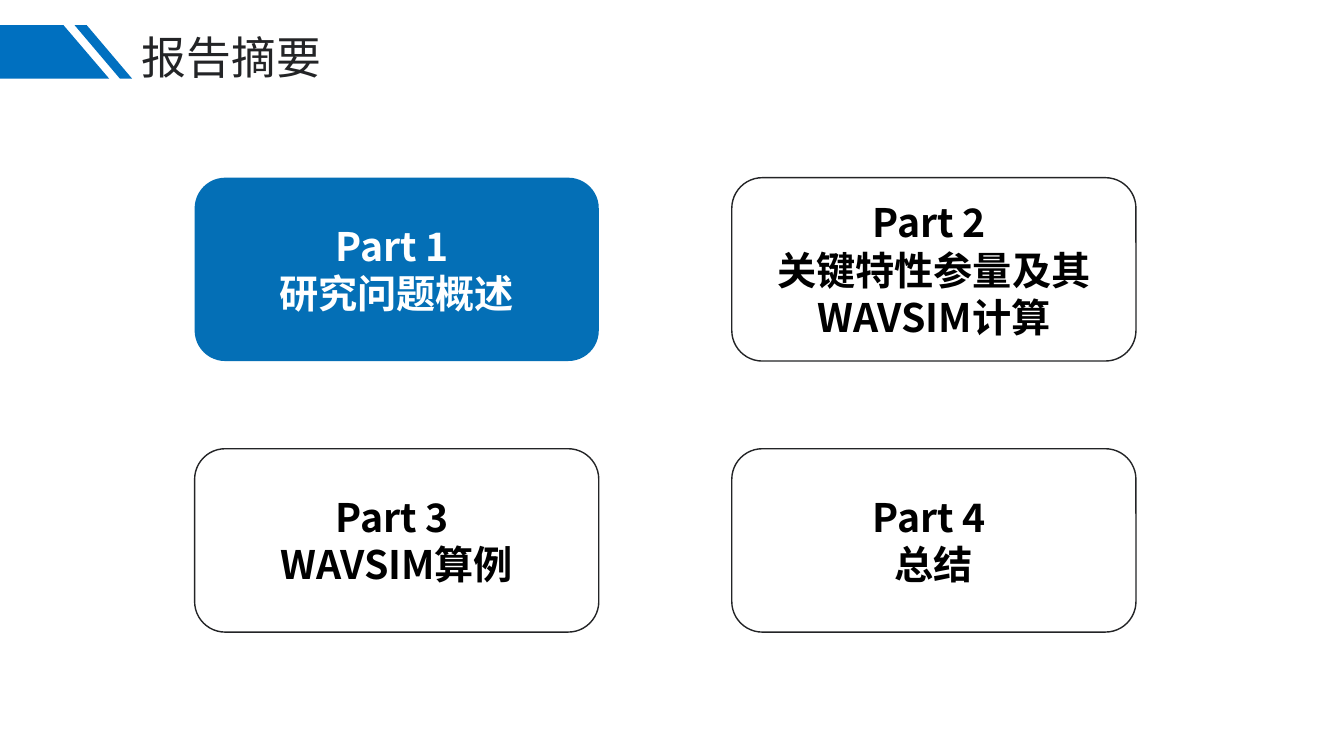
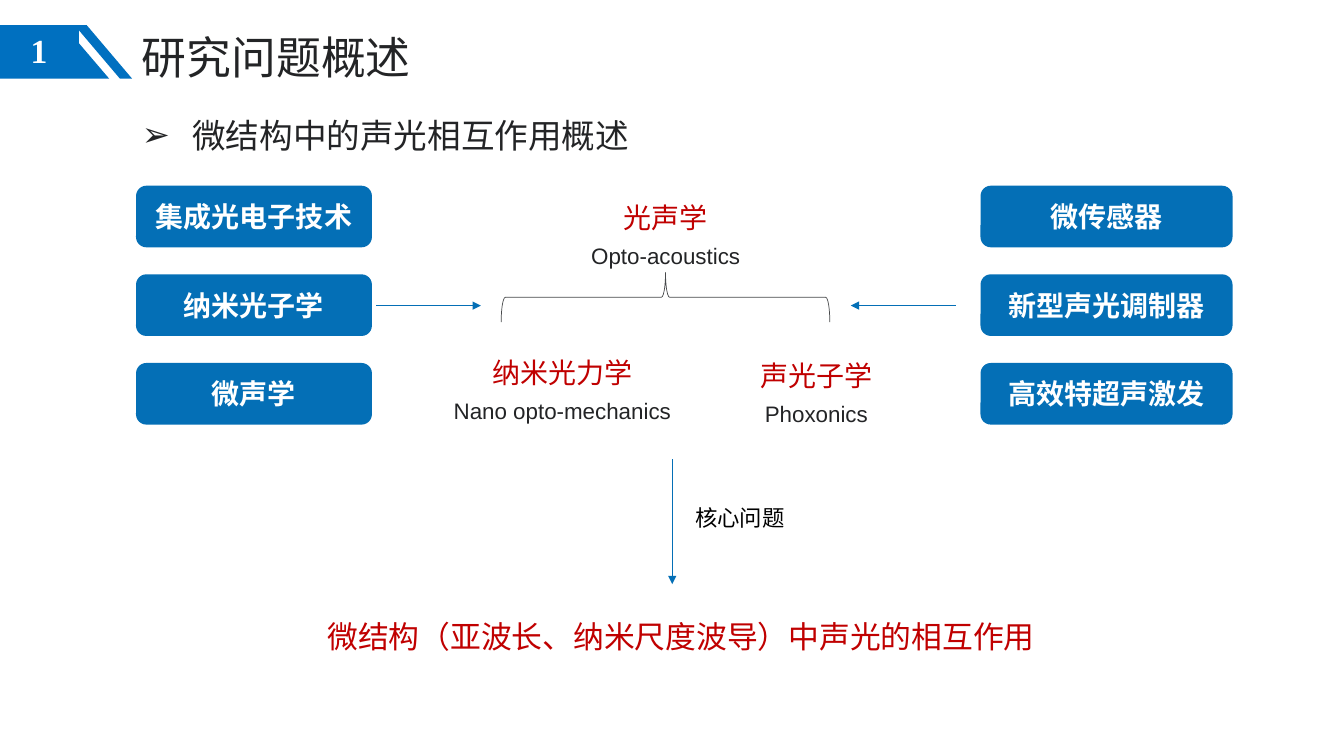
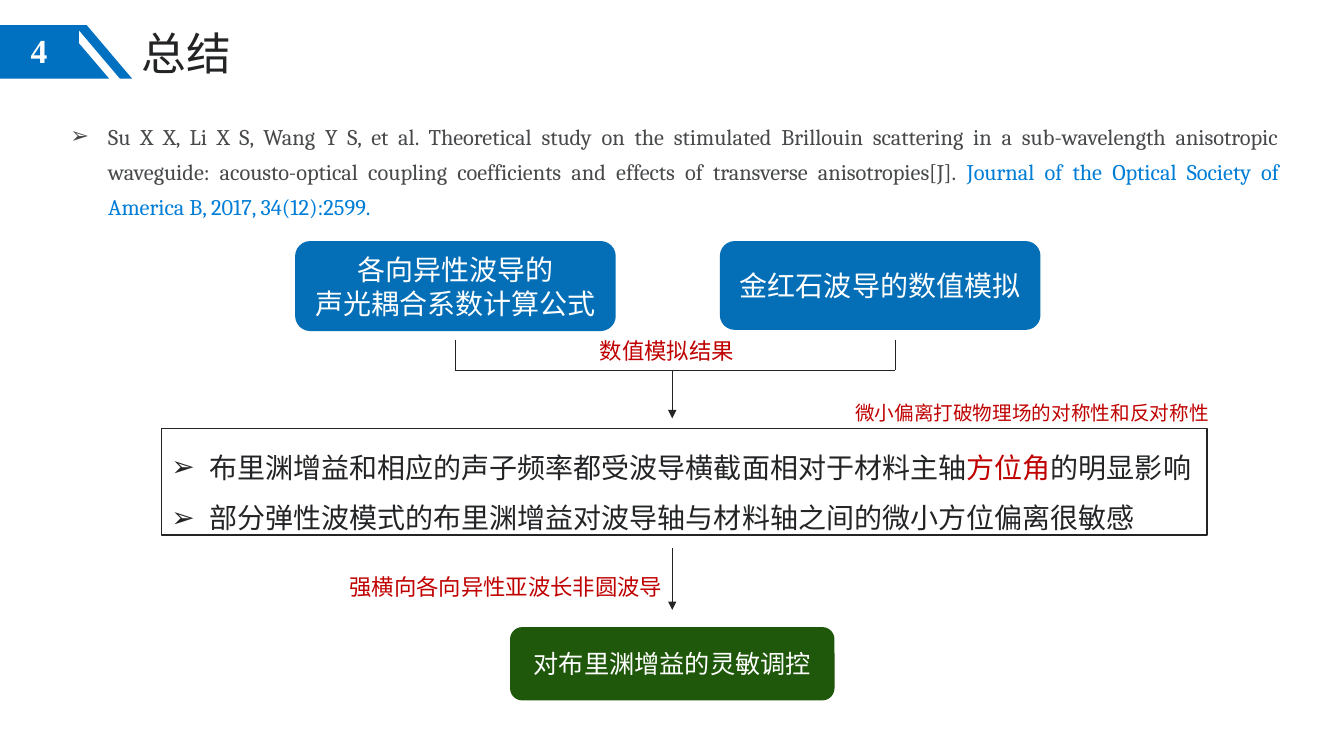
from lxml.etree import SubElement
from pptx import Presentation
from pptx.dml.color import RGBColor
from pptx.enum.shapes import MSO_CONNECTOR, MSO_SHAPE
from pptx.enum.text import MSO_ANCHOR, PP_ALIGN
from pptx.oxml.ns import qn
from pptx.util import Pt

COLORS = {
    "band": "0070C0",
    "blue": "046FB6",
    "link": "007DD6",
    "red": "C00000",
    "green": "1F580B",
    "ink": "232426",
    "gray": "47494B",
    "black": "000000",
    "white": "FFFFFF",
}
CJK = "Noto Sans CJK SC"
LEFT, CENTER, JUSTIFY = PP_ALIGN.LEFT, PP_ALIGN.CENTER, PP_ALIGN.JUSTIFY


def rgb(name):
    return RGBColor.from_string(COLORS[name])


class Deck:
    def __init__(self):
        self.prs = Presentation()
        self.prs.slide_width, self.prs.slide_height = Pt(960), Pt(540)
        self.s = None

    def slide(self, title, width, top=18, number=None):
        self.s = self.prs.slides.add_slide(self.prs.slide_layouts[6])
        self.outline([(0, 18), (45.4, 18), (78, 56.2), (0, 56.2)], "band")
        self.outline([(62, 18), (94.4, 56.2), (85.7, 56.2), (53.3, 18)], "band")
        if number:
            self.box(-0.7, 18, 57, 36, [[(number, 24, "white")]], fill="band",
                     kind=MSO_SHAPE.RECTANGLE, anchor=MSO_ANCHOR.TOP,
                     font="Times New Roman", bold=True)
        self.text(94.3, top, width, 46, [[(title, 32, "ink")]], wrap=False)

    def paint(self, sp, fill=None, line=None, weight=1):
        sp.shadow.inherit = False
        if fill:
            sp.fill.solid()
            sp.fill.fore_color.rgb = rgb(fill)
        else:
            sp.fill.background()
        if line:
            sp.line.color.rgb = rgb(line)
            sp.line.width = Pt(weight)
        else:
            sp.line.fill.background()

    def fill_text(self, tf, paragraphs, font=CJK, bold=False, align=LEFT,
                  spacing=None, indent=None):
        for i, runs in enumerate(paragraphs):
            p = tf.add_paragraph() if i else tf.paragraphs[0]
            p.alignment = align
            if spacing:
                p.line_spacing = spacing
            if indent:
                pPr = p._p.get_or_add_pPr()
                pPr.set("marL", str(Pt(indent)))
                pPr.set("indent", str(-Pt(indent)))
                SubElement(pPr, qn("a:buFont")).set("typeface", "Arial")
                SubElement(pPr, qn("a:buChar")).set("char", "➢")
            for text, size, color in runs:
                r = p.add_run()
                r.text = text
                r.font.size = Pt(size)
                r.font.bold = bold
                r.font.color.rgb = rgb(color)
                r.font.name = font
                SubElement(r._r.get_or_add_rPr(), qn("a:ea")).set("typeface", CJK)

    def text(self, x, y, w, h, paragraphs, wrap=True, **style):
        sp = self.s.shapes.add_textbox(Pt(x), Pt(y), Pt(w), Pt(h))
        sp.text_frame.word_wrap = wrap
        self.fill_text(sp.text_frame, paragraphs, **style)

    def box(self, x, y, w, h, paragraphs, fill=None, line=None,
            kind=MSO_SHAPE.ROUNDED_RECTANGLE, anchor=MSO_ANCHOR.MIDDLE,
            align=CENTER, **style):
        sp = self.s.shapes.add_shape(kind, Pt(x), Pt(y), Pt(w), Pt(h))
        self.paint(sp, fill, line)
        tf = sp.text_frame
        tf.word_wrap = True
        tf.vertical_anchor = anchor
        self.fill_text(tf, paragraphs, align=align, **style)

    def outline(self, points, fill):
        (x, y), *rest = [(Pt(a), Pt(b)) for a, b in points]
        fb = self.s.shapes.build_freeform(x, y)
        fb.add_line_segments(rest, close=True)
        self.paint(fb.convert_to_shape(), fill)

    def brace(self, x, y, w, h):
        sp = self.s.shapes.add_shape(MSO_SHAPE.LEFT_BRACE, Pt(x), Pt(y), Pt(w), Pt(h))
        sp.rotation = 90
        self.paint(sp, line="gray", weight=0.5)

    def line(self, x1, y1, x2, y2, color="ink", weight=0.5, arrow=False):
        c = self.s.shapes.add_connector(MSO_CONNECTOR.STRAIGHT,
                                        Pt(x1), Pt(y1), Pt(x2), Pt(y2))
        c.line.color.rgb = rgb(color)
        c.line.width = Pt(weight)
        spPr = c._element.spPr
        if arrow:
            SubElement(spPr.find(qn("a:ln")), qn("a:tailEnd")).set("type", "triangle")
        SubElement(spPr, qn("a:effectLst"))


def agenda(d):
    d.slide("报告摘要", 144)
    parts = ["研究问题概述", "关键特性参量及其WAVSIM计算", "WAVSIM算例", "总结"]
    for i, name in enumerate(parts):
        row, col = divmod(i, 2)
        active = i == 0
        color = "white" if active else "black"
        d.box(139 + 383.7 * col, 126.9 + 193.6 * row, 288.7, 131,
              [[(f"Part {i + 1} ", 28, color)], [(name, 28, color)]],
              fill="blue" if active else None,
              line=None if active else "ink", bold=True)


def overview(d):
    d.slide("研究问题概述", 208, number="1")
    d.text(94.3, 70, 783, 41, [[("微结构中的声光相互作用概述", 24, "ink")]],
           spacing=1.3, indent=36)

    columns = [
        (97.2, 168.5, ["集成光电子技术", "纳米光子学", "微声学"]),
        (700.4, 180, ["微传感器", "新型声光调制器", "高效特超声激发"]),
    ]
    for x, w, names in columns:
        for i, name in enumerate(names):
            d.box(x, 132.7 + 63.3 * i, w, 44, [[(name, 20, "white")]],
                  fill="blue", bold=True)

    fields = [
        (397.4, 132.5, 156.3, "光声学", "Opto-acoustics"),
        (311, 242.9, 181.4, "纳米光力学", "Nano opto-mechanics"),
        (492.4, 245.2, 181.4, "声光子学", "Phoxonics"),
    ]
    for x, y, w, name, english in fields:
        d.text(x, y, w, 61, [[(name, 20, "red")], [(english, 16, "ink")]],
               font="Arial", align=CENTER, spacing=1.3)
    d.brace(457.7, 95, 35.3, 234.7)

    for ends in [(268.6, 218.3, 343.5, 218.3), (682.6, 218.3, 607.7, 218.3),
                 (480.2, 328, 480.2, 417.3)]:
        d.line(*ends, color="blue", arrow=True)
    d.text(489.6, 350.6, 79, 30, [[("核心问题", 16, "black")]],
           wrap=False, font="Arial", spacing=1.3)
    d.text(226.8, 430, 525.6, 39,
           [[("微结构（亚波长、纳米尺度波导）中声光的相互作用", 22, "red")]], spacing=1.3)


def summary(d):
    d.slide("总结", 79, top=14.6, number="4")
    d.text(43.2, 78.5, 877.7, 81.4, [[
        ("Su X X, Li X S, Wang Y S, et al. Theoretical study on the stimulated "
         "Brillouin scattering in a sub-wavelength anisotropic waveguide: "
         "acousto-optical coupling coefficients and effects of transverse "
         "anisotropies[J]. ", 16, "gray"),
        ("Journal of the Optical Society of America B, 2017, 34(12):2599.", 16, "link"),
    ]], font="Cambria", align=JUSTIFY, spacing=1.3, indent=27)

    topics = [(210.8, 64.3, ["各向异性波导的", "声光耦合系数计算公式"]),
              (514.2, 63.4, ["金红石波导的数值模拟"])]
    for x, h, lines in topics:
        d.box(x, 172.2, 229, h, [[(t, 20, "white")] for t in lines], fill="blue")

    left, right, top, bottom, middle = 325.3, 639.4, 242.6, 264.3, 480.2
    d.line(left, top, left, bottom)
    d.line(left, bottom, right, bottom)
    d.line(right, top, right, bottom)
    for y1, y2 in [(bottom, 298.8), (391.5, 435.7)]:
        d.line(middle, y1, middle, y2, weight=1, arrow=True)

    d.box(115.3, 306.2, 746.8, 76, [
        [("布里渊增益和相应的声子频率都受波导横截面相对于材料主轴", 20, "ink"),
         ("方位角", 20, "red"), ("的明显影响", 20, "ink")],
        [("部分弹性波模式的布里渊增益对波导轴与材料轴之间的微小方位偏离很敏感", 20, "ink")],
    ], line="ink", kind=MSO_SHAPE.RECTANGLE, anchor=MSO_ANCHOR.TOP,
        align=LEFT, spacing=1.5, indent=27)

    notes = [
        (420.5, 231.8, 111.6, 16, "数值模拟结果"),
        (241.2, 400.3, 240.5, 16, "强横向各向异性亚波长非圆波导"),
        (602.6, 277.9, 269.3, 14, "微小偏离打破物理场的对称性和反对称性"),
    ]
    for x, y, w, size, note in notes:
        d.text(x, y, w, 30, [[(note, size, "red")]], wrap=False,
               font="Arial", align=CENTER, spacing=1.3)
    d.box(364.3, 447.9, 231.8, 52.4, [[("对布里渊增益的灵敏调控", 18, "white")]],
          fill="green")


def main():
    d = Deck()
    agenda(d)
    overview(d)
    summary(d)
    d.prs.save("out.pptx")


if __name__ == "__main__":
    main()
